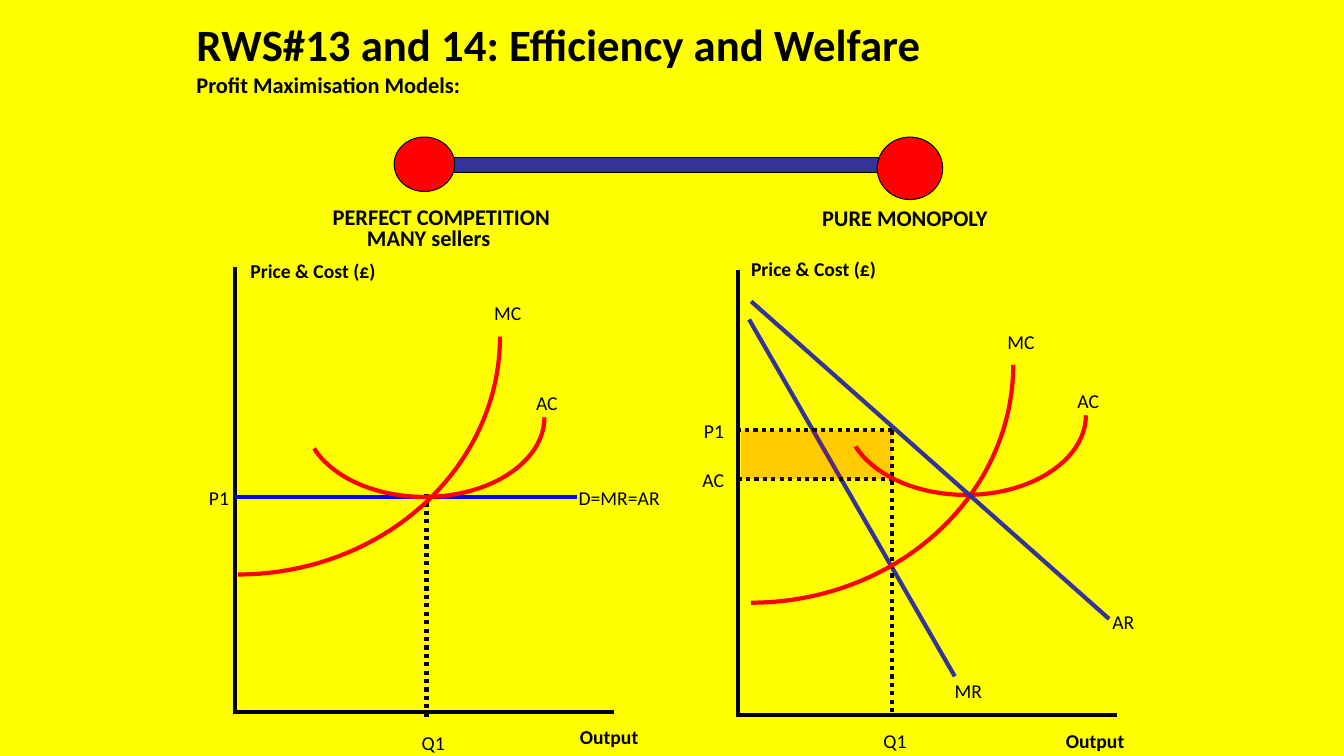
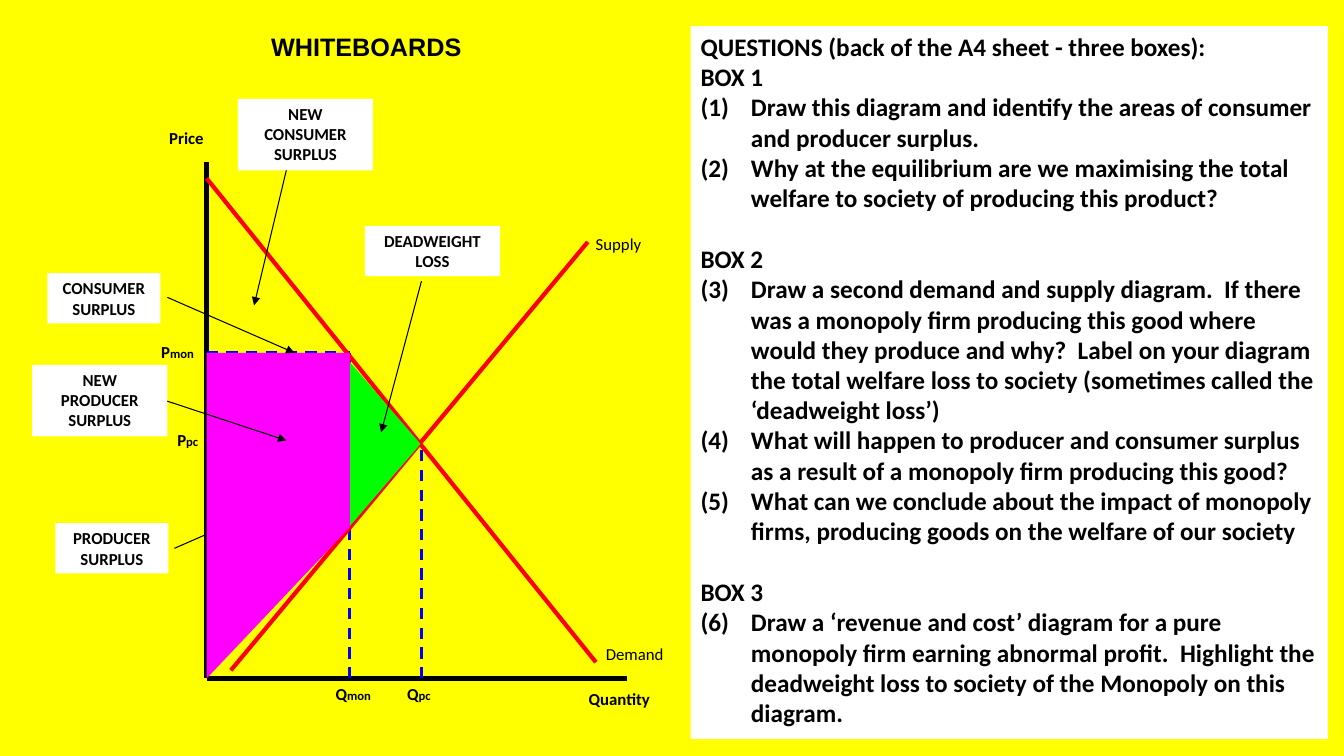
import math

import lxml.etree
import pptx
import pptx.dml.color
import pptx.enum.dml
import pptx.enum.shapes
import pptx.enum.text
import pptx.oxml.ns
import pptx.util

YELLOW, WHITE, BLACK = "FFFF00", "FFFFFF", "000000"
RED, BLUE, NAVY = "FF0000", "0000FF", "333399"
GREEN, PINK = "00FF00", "FF00FF"

KIND = pptx.enum.shapes.MSO_SHAPE
DOT = pptx.enum.dml.MSO_LINE.ROUND_DOT
DASH = pptx.enum.dml.MSO_LINE.DASH
ALIGN = {
    "l": pptx.enum.text.PP_ALIGN.LEFT,
    "c": pptx.enum.text.PP_ALIGN.CENTER,
    "r": pptx.enum.text.PP_ALIGN.RIGHT,
}


def px(n):
    """Turn px, 100 to the inch, into EMU."""
    return pptx.util.Emu(round(n * 9144))


def rgb(code):
    return pptx.dml.color.RGBColor.from_string(code)


def node(parent, tag, **attrs):
    return lxml.etree.SubElement(parent, pptx.oxml.ns.qn(tag), **attrs)


class Area:
    """A region of a slide; all its parts are placed from its origin."""

    def __init__(self, slide, left, top):
        self.shapes, self.left, self.top = slide.shapes, left, top

    def spot(self, x, y):
        return px(self.left + x), px(self.top + y)

    def frame(self, box):
        x, y, wide, high = box
        return *self.spot(x, y), px(wide), px(high)

    def text(self, box, words, size=14, bold=False, align="l", font="Calibri",
             wrap=True, pad=None, fill=None):
        """Write a string, or rows of (string, size) runs."""
        shape = self.shapes.add_textbox(*self.frame(box))
        if fill:
            shape.fill.solid()
            shape.fill.fore_color.rgb = rgb(fill)
        body = shape.text_frame
        body.word_wrap = wrap
        if pad is not None:
            body.margin_left = body.margin_right = px(pad)
            body.margin_top = body.margin_bottom = px(pad)
        rows = [[(words, size)]] if isinstance(words, str) else words
        for i, row in enumerate(rows):
            para = body.add_paragraph() if i else body.paragraphs[0]
            para.alignment = ALIGN[align]
            for part, points in row:
                run = para.add_run()
                run.text = part
                run.font.name, run.font.bold = font, bold
                run.font.size = pptx.util.Pt(points)
                run.font.color.rgb = rgb(BLACK)
        return body

    def line(self, ends, color=BLACK, width=3, dash=None, arrow=False):
        x1, y1, x2, y2 = ends
        link = self.shapes.add_connector(
            pptx.enum.shapes.MSO_CONNECTOR.STRAIGHT,
            *self.spot(x1, y1), *self.spot(x2, y2))
        link.line.color.rgb = rgb(color)
        link.line.width = pptx.util.Pt(width)
        if dash:
            link.line.dash_style = dash
        props = link._element.spPr
        if arrow:
            node(props.find(pptx.oxml.ns.qn("a:ln")), "a:tailEnd", type="triangle")
        node(props, "a:effectLst")

    def block(self, kind, box, color, edge=None, turn=0, alpha=100):
        shape = self.shapes.add_shape(kind, *self.frame(box))
        shape.shadow.inherit = False
        shape.rotation = turn
        shape.fill.solid()
        shape.fill.fore_color.rgb = rgb(color)
        if edge:
            shape.line.color.rgb = rgb(edge)
            shape.line.width = pptx.util.Pt(0.75)
        else:
            shape.line.fill.background()
        if alpha < 100:
            tint = shape._element.spPr.find(
                pptx.oxml.ns.qn("a:solidFill") + "/" + pptx.oxml.ns.qn("a:srgbClr"))
            node(tint, "a:alpha", val=str(alpha * 1000))

    def arc(self, mid, radii, sweep):
        """Draw an elliptic curve, clockwise from its right end."""
        angles = [math.radians(sweep * i / 40) for i in range(41)]
        points = [self.spot(mid[0] + radii[0] * math.cos(a),
                            mid[1] + radii[1] * math.sin(a)) for a in angles]
        path = self.shapes.build_freeform(*points[0], scale=1.0)
        path.add_line_segments(points[1:], close=False)
        shape = path.convert_to_shape()
        shape.shadow.inherit = False
        shape.fill.background()
        shape.line.color.rgb = rgb(RED)
        shape.line.width = pptx.util.Pt(3)


def page(deck):
    slide = deck.slides.add_slide(deck.slide_layouts[6])
    slide.background.fill.solid()
    slide.background.fill.fore_color.rgb = rgb(YELLOW)
    return slide


def axes(area, price, output):
    area.line((0, 0, 0, 440))
    area.line((-2, 441, 376, 441))
    area.text(price, "Price & Cost (£)", bold=True, align="c")
    area.text(output, "Output", bold=True, align="r")


def costs(area, average, margin):
    """Draw the average and marginal cost curves round their centres."""
    for name, (x, y), radii, sweep, (dx, dy) in (
            ("AC", average, (119, 79), 157, (88, -31)),
            ("MC", margin, (260, 236), 90, (237, -40))):
        area.arc((x, y), radii, sweep)
        area.text((x + dx, y + dy, 54, 33), name, align="r")


def rival(slide, left, top):
    """Draw the perfect competition graph."""
    area = Area(slide, left, top)
    area.line((190, 225, 190, 450), dash=DOT)
    axes(area, (-2, -13, 159, 34), (315, 449, 95, 33))
    area.line((0, 228, 339, 228), BLUE)
    costs(area, (188, 149), (3, 69))
    area.text((331, 212, 101, 33), "D=MR=AR", wrap=False)
    area.text((-86, 212, 90, 33), "P1", align="r")
    area.text((157, 455, 61, 33), "Q1", align="r")


def single(slide, left, top):
    """Draw the pure monopoly graph."""
    area = Area(slide, left, top)
    axes(area, (-3, -18, 156, 34), (298, 450, 95, 33))
    area.line((11, 49, 215, 403), NAVY)
    for ends in ((153, 159, 153, 443), (153, 159, -3, 159), (154, 207, -3, 207)):
        area.line(ends, dash=DOT)
    costs(area, (226, 144), (13, 94))
    area.line((13, 31, 368, 346), NAVY)
    for name, x, y, wide in (("MR", 176, 401, 76), ("P1", -80, 143, 76),
                             ("Q1", 125, 450, 52), ("AC", -58, 191, 54),
                             ("AR", 349, 332, 54)):
        area.text((x, y, wide, 33), name, align="r")
    area.block(KIND.RECTANGLE, (3, 159, 150, 48), RED, alpha=20)


def scale(slide, left, top):
    """Draw the bar that runs from competition to monopoly."""
    area = Area(slide, left, top)
    area.block(KIND.RECTANGLE, (28, 20, 475, 15), NAVY, BLACK)
    for box in ((0, 0, 60, 54), (479, 0, 65, 62)):
        area.block(KIND.OVAL, box, RED, BLACK)
    for name, box, align in (("PERFECT COMPETITION", (-61, 66, 253, 27), "l"),
                             ("MANY sellers", (-27, 86, 134, 27), "l"),
                             ("PURE MONOPOLY", (408, 67, 197, 27), "c")):
        area.text(box, name, size=16, bold=True, align=align, pad=0)


def market(slide, left, top):
    """Draw the welfare diagram with its callouts."""
    area = Area(slide, left, top)

    def note(words, box, ends):
        area.text(box, words, size=12, bold=True, align="c", fill=WHITE)
        area.line(ends, width=0.75, arrow=True)

    area.line((0, 0, 0, 512), width=4)
    area.line((0, 512, 417, 512), width=4)
    for ends in ((213, 512, 213, 276), (0, 189, 142, 189), (142, 512, 142, 189)):
        area.line(ends, BLUE, 2, DASH)
    for ends in ((24, 504, 378, 79), (0, 16, 386, 496)):
        area.line(ends, RED)
    for name, x, y, wide, bold in (
            ("Supply", 376, 66, 66, False), ("Demand", 386, 473, 78, False),
            ("Price", -47, -39, 70, True), ("Quantity", 369, 517, 82, True)):
        area.text((x, y, wide, 30), name, size=12, bold=bold, wrap=False)
    for name, sub, x, y, wide in (("P", "pc", -39, 260, 41), ("Q", "pc", 189, 512, 44),
                                  ("P", "mon", -55, 173, 53), ("Q", "mon", 118, 512, 56)):
        area.text((x, y, wide, 30), [[(name, 12), (sub, 9)]], bold=True, wrap=False)

    note("PRODUCER SURPLUS", (-150, 358, 112, 50), (-32, 383, 87, 331))
    area.block(KIND.ISOSCELES_TRIANGLE, (94, 244, 165, 71), GREEN, turn=90)
    area.block(KIND.RECTANGLE, (0, 189, 142, 173), PINK)
    area.block(KIND.RIGHT_TRIANGLE, (-4, 366, 150, 142), PINK, turn=90)
    note("CONSUMER SURPLUS", (-158, 110, 112, 50), (-39, 134, 87, 189))
    note("DEADWEIGHT LOSS", (157, 63, 134, 50), (213, 118, 173, 268))
    note("NEW CONSUMER SURPLUS", (31, -63, 134, 71), (79, 8, 47, 142))
    note("NEW PRODUCER SURPLUS", (-173, 201, 134, 71), (-39, 237, 79, 276))


TASKS = (
    ("BOX 1", (
        "Draw this diagram and identify the areas of consumer and producer surplus.",
        "Why at the equilibrium are we maximising the total welfare to society of "
        "producing this product?")),
    ("BOX 2", (
        "Draw a second demand and supply diagram.  If there was a monopoly firm "
        "producing this good where would they produce and why?  Label on your diagram "
        "the total welfare loss to society (sometimes called the ‘deadweight loss’)",
        "What will happen to producer and consumer surplus as a result of a monopoly "
        "firm producing this good?",
        "What can we conclude about the impact of monopoly firms, producing goods on "
        "the welfare of our society")),
    ("BOX 3", (
        "Draw a ‘revenue and cost’ diagram for a pure monopoly firm earning abnormal "
        "profit.  Highlight the deadweight loss to society of the Monopoly on this "
        "diagram.",)),
)


def quiz(slide, left, top):
    """Write the panel of numbered questions."""
    rows = ["QUESTIONS (back of the A4 sheet - three boxes):"]
    for head, asks in TASKS:
        rows += [head, *asks]
    body = Area(slide, left, top).text(
        (0, 0, 632, 707), [[(row, 18)] for row in rows], bold=True, fill=WHITE)
    paras = iter(body.paragraphs[1:])
    first = 1
    for i, (head, asks) in enumerate(TASKS):
        title = next(paras)
        if i:
            title.space_before = pptx.util.Pt(22)
        for _ in asks:
            props = next(paras)._p.get_or_add_pPr()
            props.set("marL", str(px(50)))
            props.set("indent", str(px(-50)))
            node(props, "a:buFont", typeface="+mj-lt")
            node(props, "a:buAutoNum", type="arabicParenBoth", startAt=str(first))
        first += len(asks)


def main():
    deck = pptx.Presentation()
    deck.slide_width, deck.slide_height = px(1333), px(750)

    models = page(deck)
    Area(models, 185, 12).text(
        (0, 0, 747, 91), [[("RWS#13 and 14: Efficiency and Welfare", 32)],
                          [("Profit Maximisation Models:", 16)]],
        bold=True, wrap=False)
    rival(models, 233, 265)
    single(models, 732, 268)
    scale(models, 391, 136)

    boards = page(deck)
    market(boards, 205, 161)
    quiz(boards, 685, 26)
    Area(boards, 259, 26).text((0, 0, 211, 40), "WHITEBOARDS", size=18, bold=True,
                               font="Arial", wrap=False)
    deck.save("out.pptx")


if __name__ == "__main__":
    main()
